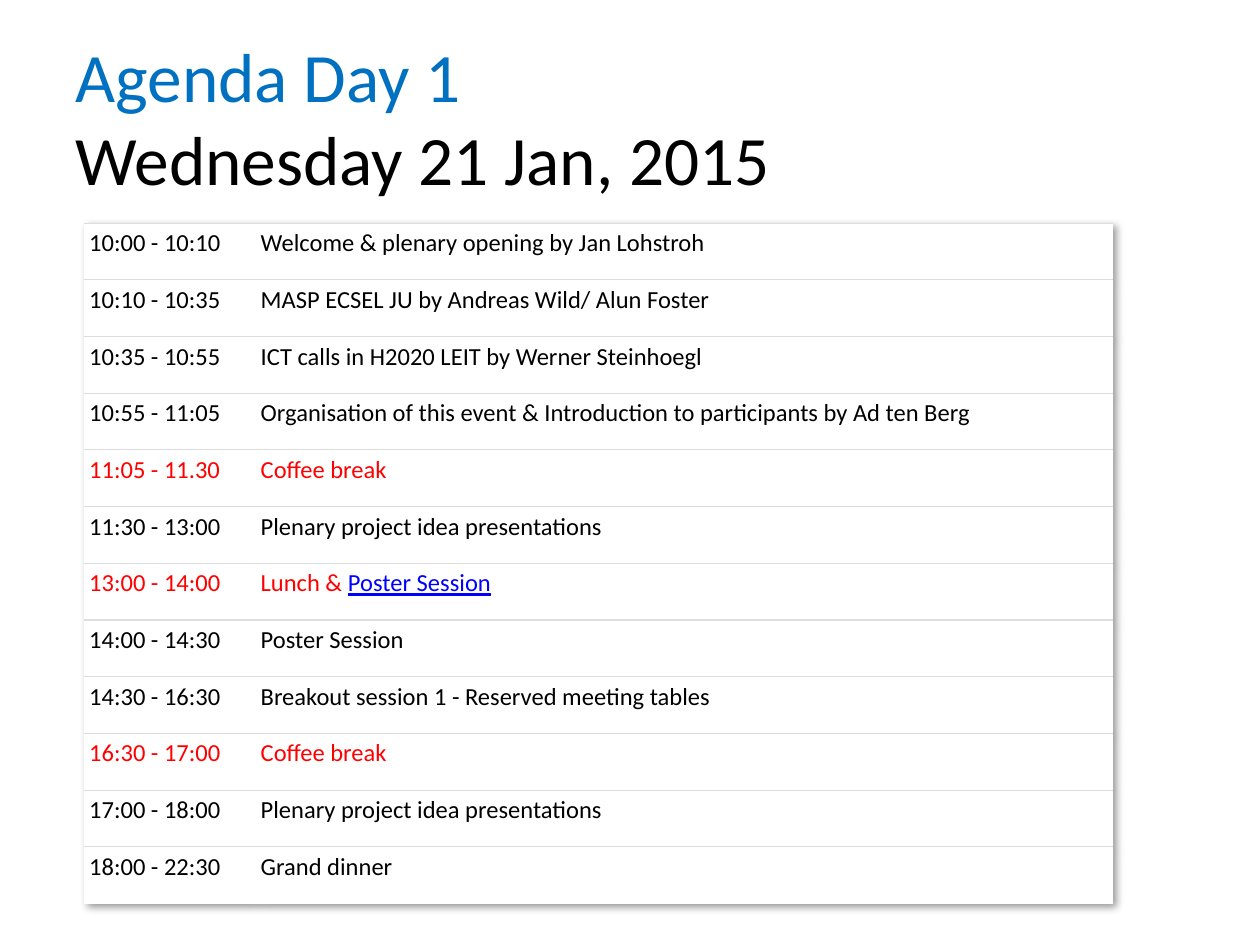
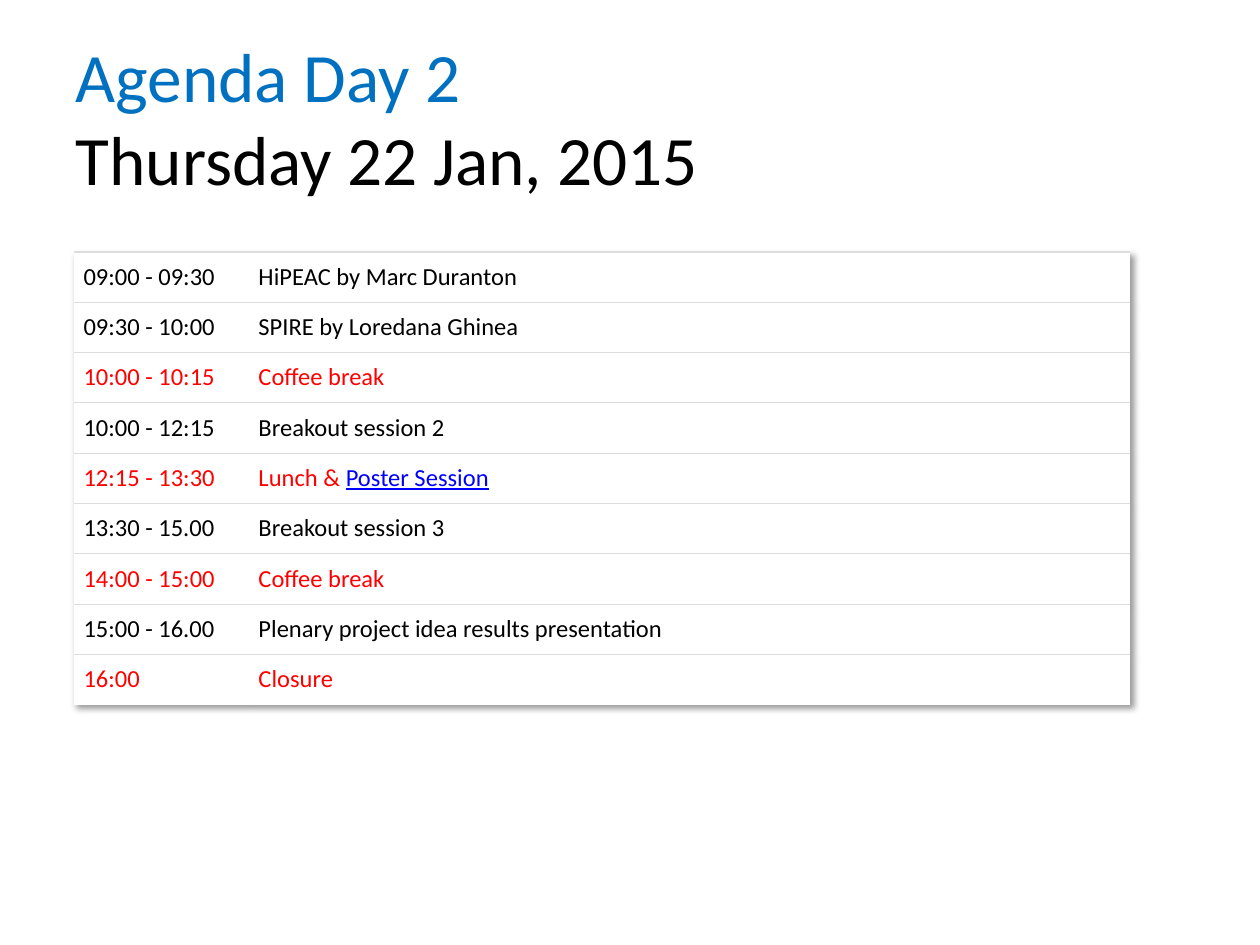
from lxml import etree
from pptx import Presentation
from pptx.dml.color import RGBColor
from pptx.enum.text import MSO_ANCHOR, MSO_AUTO_SIZE, PP_ALIGN
from pptx.oxml import parse_xml
from pptx.oxml.ns import nsdecls, qn
from pptx.util import Pt

LEFT = PP_ALIGN.LEFT
MIDDLE = MSO_ANCHOR.MIDDLE
FIXED = MSO_AUTO_SIZE.NONE

FONT = "Calibri"
COLORS = {
    "head": "0070C0",
    "text": "000000",
    "pause": "FF0000",
    "link": "0000FF",
    "rule": "DDDDDD",
    "cell": "FFFFFF",
}
TITLE_SIZE, CELL_SIZE = 39.6, 14
PAUSES = ("Coffee", "Lunch", "Closure")
LINK = "Poster Session"

DAYS = [
    {
        "head": "Agenda Day 1",
        "date": "Wednesday 21 Jan, 2015",
        "left": 48, "top": 127.5, "cols": (98, 490), "row": 32.4, "pad": 3,
        "plan": [
            ("10:00 - 10:10", "Welcome & plenary opening by Jan Lohstroh"),
            ("10:10 - 10:35", "MASP ECSEL JU by Andreas Wild/ Alun Foster"),
            ("10:35 - 10:55", "ICT calls in H2020 LEIT by Werner Steinhoegl"),
            ("10:55 - 11:05", "Organisation of this event & Introduction to "
                              "participants by Ad ten Berg"),
            ("11:05 - 11.30", "Coffee break"),
            ("11:30 - 13:00", "Plenary project idea presentations"),
            ("13:00 - 14:00", "Lunch & Poster Session"),
            ("14:00 - 14:30", "Poster Session"),
            ("14:30 - 16:30", "Breakout session 1 - Reserved meeting tables"),
            ("16:30 - 17:00", "Coffee break"),
            ("17:00 - 18:00", "Plenary project idea presentations"),
            ("18:00 - 22:30", "Grand dinner"),
        ],
    },
    {
        "head": "Agenda Day 2",
        "date": "Thursday 22 Jan, 2015",
        "left": 42, "top": 144, "cols": (100, 504), "row": 28.75, "pad": 5.75,
        "plan": [
            ("09:00 - 09:30", "HiPEAC by Marc Duranton"),
            ("09:30 - 10:00", "SPIRE by Loredana Ghinea"),
            ("10:00 - 10:15", "Coffee break"),
            ("10:00 - 12:15", "Breakout session 2"),
            ("12:15 - 13:30", "Lunch & Poster Session"),
            ("13:30 - 15.00", "Breakout session 3"),
            ("14:00 - 15:00", "Coffee break"),
            ("15:00 - 16.00", "Plenary project idea results presentation"),
            ("16:00", "Closure"),
        ],
    },
]


def add_text(para, text, size=CELL_SIZE, color="text", line=False):
    run = para.add_run()
    run.text = text
    font = run.font
    font.name, font.size = FONT, Pt(size)
    font.color.rgb = RGBColor.from_string(COLORS[color])
    if line:
        font.underline = True


def add_title(slide, head, date):
    title = slide.shapes.title
    title.left, title.top = Pt(36), Pt(21.6)
    title.width, title.height = Pt(568), Pt(90)
    frame = title.text_frame
    frame.auto_size, frame.vertical_anchor = FIXED, MIDDLE
    para = frame.paragraphs[0]
    para.alignment = LEFT
    add_text(para, head, size=TITLE_SIZE, color="head")
    para.add_line_break()
    add_text(para, date, size=TITLE_SIZE)


def set_rules(cell, last):
    """Rule the cell above and below; leave the sides and the table end open."""
    props = cell._tc.get_or_add_tcPr()
    ruled = {"lnL": False, "lnR": False, "lnT": True, "lnB": not last}
    for spot, (tag, on) in enumerate(ruled.items()):
        edge = etree.Element(qn("a:" + tag), w=str(Pt(0.75) if on else 0))
        if on:
            fill = etree.SubElement(edge, qn("a:solidFill"))
            etree.SubElement(fill, qn("a:srgbClr"), val=COLORS["rule"])
        else:
            etree.SubElement(edge, qn("a:noFill"))
        props.insert(spot, edge)


def add_shadow(table):
    props = table._tbl.tblPr
    props.insert(0, parse_xml(
        f'<a:effectLst {nsdecls("a")}>'
        f'<a:outerShdw blurRad="{Pt(4)}" dist="{Pt(3)}" dir="2700000" '
        'algn="tl" rotWithShape="0"><a:srgbClr val="000000">'
        '<a:alpha val="40000"/></a:srgbClr></a:outerShdw></a:effectLst>'))


def fill_cell(cell, text, color, pad, last):
    cell.margin_left = cell.margin_right = Pt(pad)
    cell.margin_top = cell.margin_bottom = Pt(pad)
    cell.fill.solid()
    cell.fill.fore_color.rgb = RGBColor.from_string(COLORS["cell"])
    set_rules(cell, last)
    para = cell.text_frame.paragraphs[0]
    if text.startswith("Lunch"):
        add_text(para, text.removesuffix(LINK), color=color)
        add_text(para, LINK, color="link", line=True)
    else:
        add_text(para, text, color=color)


def add_plan(slide, plan, left, top, cols, row, pad):
    count = len(plan)
    table = slide.shapes.add_table(
        count, len(cols), Pt(left), Pt(top), Pt(sum(cols)), Pt(row * count)
    ).table
    table.first_row = table.horz_banding = False
    add_shadow(table)
    for col, width in zip(table.columns, cols):
        col.width = Pt(width)
    for i, (time, topic) in enumerate(plan):
        table.rows[i].height = Pt(row)
        color = "pause" if topic.startswith(PAUSES) else "text"
        for j, text in enumerate((time, topic)):
            fill_cell(table.cell(i, j), text, color, pad, i == count - 1)


def main():
    deck = Presentation()
    deck.slide_width, deck.slide_height = Pt(720), Pt(540)
    for day in DAYS:
        slide = deck.slides.add_slide(deck.slide_layouts[5])
        add_title(slide, day["head"], day["date"])
        add_plan(slide, day["plan"], day["left"], day["top"],
                 day["cols"], day["row"], day["pad"])
    deck.save("out.pptx")


if __name__ == "__main__":
    main()
